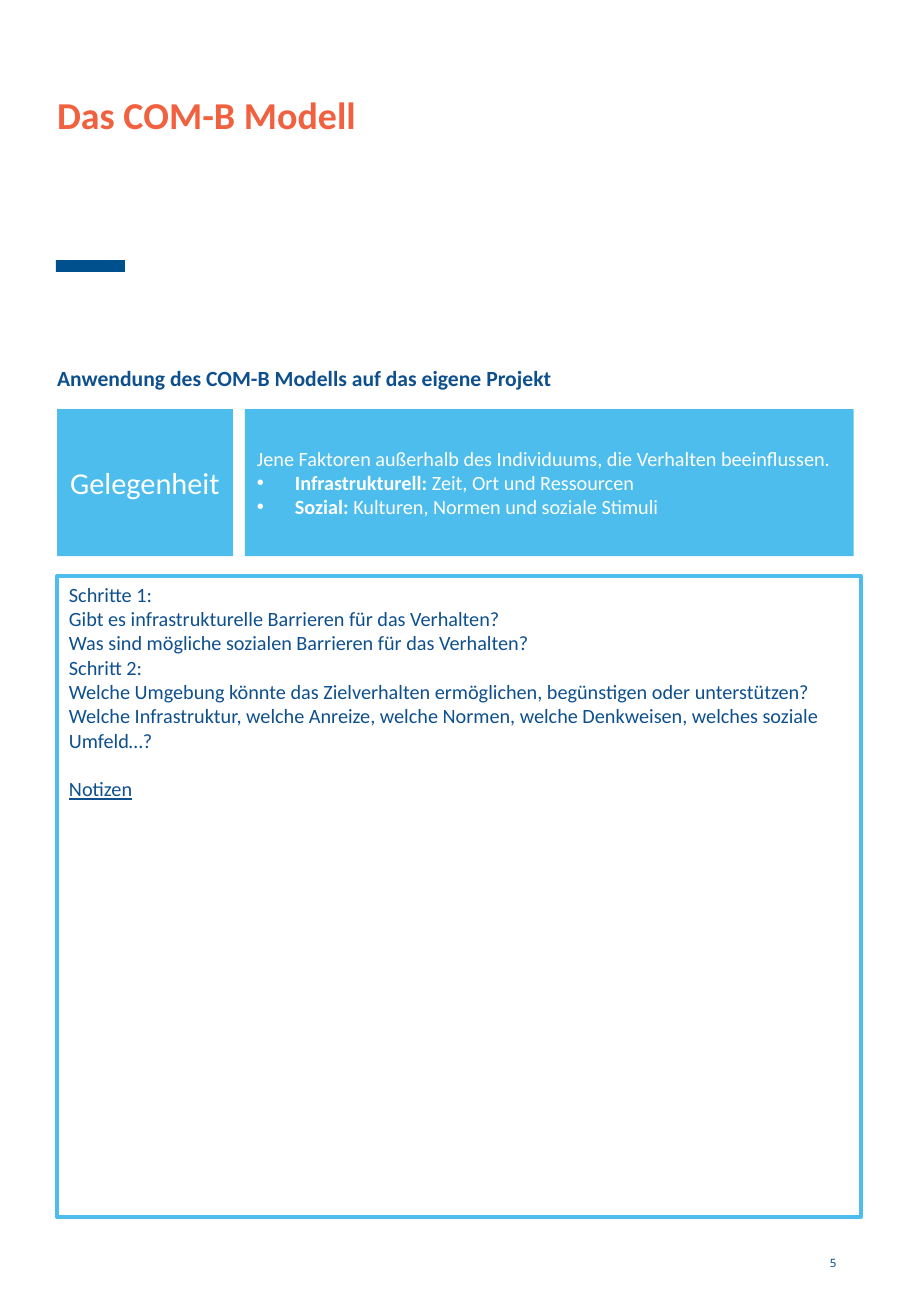
from dataclasses import dataclass

from lxml import etree
from pptx import Presentation
from pptx import util as u
from pptx.dml.color import RGBColor
from pptx.enum import shapes, text
from pptx.oxml import ns

EMU_PER_PX = 7526


def px(length):
    return u.Emu(length * EMU_PER_PX)


@dataclass(frozen=True)
class Theme:
    navy: str = "01508E"
    ink: str = "0E508E"
    sky: str = "4CBDEC"
    coral: str = "F1613F"
    white: str = "FFFFFF"
    font: str = "Calibri"
    number_font: str = "Noto Sans"
    title: float = 22.5
    label: float = 18
    heading: float = 12.8
    body: float = 12
    number: float = 6.8
    border: float = 2.25


class Page:
    def __init__(self, deck, theme):
        self.theme = theme
        self.slide = deck.slides.add_slide(deck.slide_layouts[5])

    def fill_text(self, box, paragraphs, color, size, font=None, bold=False,
                  anchor=text.MSO_ANCHOR.TOP, align=text.PP_ALIGN.LEFT,
                  insets=(12, 6, 12, 6)):
        """Each paragraph is a dict: spans, and optionally bullet and format."""
        frame = box.text_frame
        left, top, right, bottom = map(px, insets)
        frame_format = {
            "word_wrap": True, "auto_size": text.MSO_AUTO_SIZE.NONE,
            "vertical_anchor": anchor, "margin_left": left, "margin_top": top,
            "margin_right": right, "margin_bottom": bottom,
        }
        for name, value in frame_format.items():
            setattr(frame, name, value)
        for index, content in enumerate(paragraphs):
            para = frame.add_paragraph() if index else frame.paragraphs[0]
            para_format = {"alignment": align, "space_before": u.Pt(0),
                           **content.get("format", {})}
            for name, value in para_format.items():
                setattr(para, name, value)
            if content.get("bullet"):
                self.bullet(para)
            for words, extra in content["spans"]:
                span = para.add_run()
                span.text = words
                span_format = {"name": font or self.theme.font,
                               "size": u.Pt(size), "bold": bold, **extra}
                for name, value in span_format.items():
                    setattr(span.font, name, value)
                span.font.color.rgb = RGBColor.from_string(color)

    def bullet(self, para):
        properties = para._p.get_or_add_pPr()
        properties.set("marL", str(px(38)))
        properties.set("indent", str(px(-38)))
        etree.SubElement(properties, ns.qn("a:buFont")).set("typeface", "Arial")
        etree.SubElement(properties, ns.qn("a:buChar")).set("char", "•")

    def title(self, area, words):
        box = self.slide.shapes.title
        box.left, box.top, box.width, box.height = map(px, area)
        self.fill_text(box, [plain(words)], self.theme.coral, self.theme.title,
                       bold=True, insets=(11, 12, 11, 6))

    def text_box(self, area, paragraphs, color, size, **style):
        box = self.slide.shapes.add_textbox(*map(px, area))
        self.fill_text(box, paragraphs, color, size, **style)

    def rectangle(self, area, fill=None, line=None):
        box = self.slide.shapes.add_shape(shapes.MSO_SHAPE.RECTANGLE, *map(px, area))
        box.shadow.inherit = False
        if fill:
            box.fill.solid()
            box.fill.fore_color.rgb = RGBColor.from_string(fill)
        else:
            box.fill.background()
        if line:
            box.line.color.rgb = RGBColor.from_string(line)
            box.line.width = u.Pt(self.theme.border)
        else:
            box.line.fill.background()
        return box


def plain(words, **extra):
    return {"spans": [(words, extra)]}


def factor(name, examples):
    return {"spans": [(name, {"bold": True}), (examples, {})], "bullet": True}


def main():
    theme = Theme()
    deck = Presentation()
    deck.slide_width, deck.slide_height = u.Inches(7.5), u.Inches(10.83)
    page = Page(deck, theme)
    middle = text.MSO_ANCHOR.MIDDLE

    # Page number and accent bar
    page.text_box((821, 1228, 112, 70), [plain("5")], theme.navy, theme.number,
                  font=theme.number_font, anchor=middle, insets=(9, 5, 9, 5))
    page.rectangle((56, 260, 69, 12), fill=theme.navy)

    # Title and heading
    page.title((46, 80, 820, 107), "Das COM-B Modell")
    heading = plain("Anwendung des COM-B Modells auf das eigene Projekt")
    heading["format"] = {"line_spacing": 1.2}
    page.text_box((46, 354, 820, 815), [heading], theme.ink, theme.heading,
                  bold=True, insets=(11, 6, 11, 6))

    # Factor label and its definition
    label = page.rectangle((57, 409, 176, 147), fill=theme.sky)
    page.fill_text(label, [plain("Gelegenheit")], theme.white, theme.label,
                   anchor=middle, align=text.PP_ALIGN.CENTER)
    definition = page.rectangle((245, 409, 609, 147), fill=theme.sky)
    page.fill_text(definition, [
        plain("Jene Faktoren außerhalb des Individuums, die Verhalten beeinflussen."),
        factor("Infrastrukturell: ", "Zeit, Ort und Ressourcen"),
        factor("Sozial: ", "Kulturen, Normen und soziale Stimuli"),
    ], theme.white, theme.body, anchor=middle)

    # Worksheet with guiding questions and space for notes
    questions = [
        "Schritte 1:",
        "Gibt es infrastrukturelle Barrieren für das Verhalten?",
        "Was sind mögliche sozialen Barrieren für das Verhalten?",
        "Schritt 2:",
        "Welche Umgebung könnte das Zielverhalten ermöglichen, begünstigen oder "
        "unterstützen?",
        "Welche Infrastruktur, welche Anreize, welche Normen, welche Denkweisen, "
        "welches soziale Umfeld…?",
    ]
    notes = plain("Notizen", underline=True)
    notes["format"] = {"space_before": u.Pt(14.5)}
    worksheet = page.rectangle((57, 576, 804, 641), line=theme.sky)
    page.fill_text(worksheet, [*map(plain, questions), notes], theme.ink, theme.body)

    deck.save("out.pptx")


if __name__ == "__main__":
    main()
